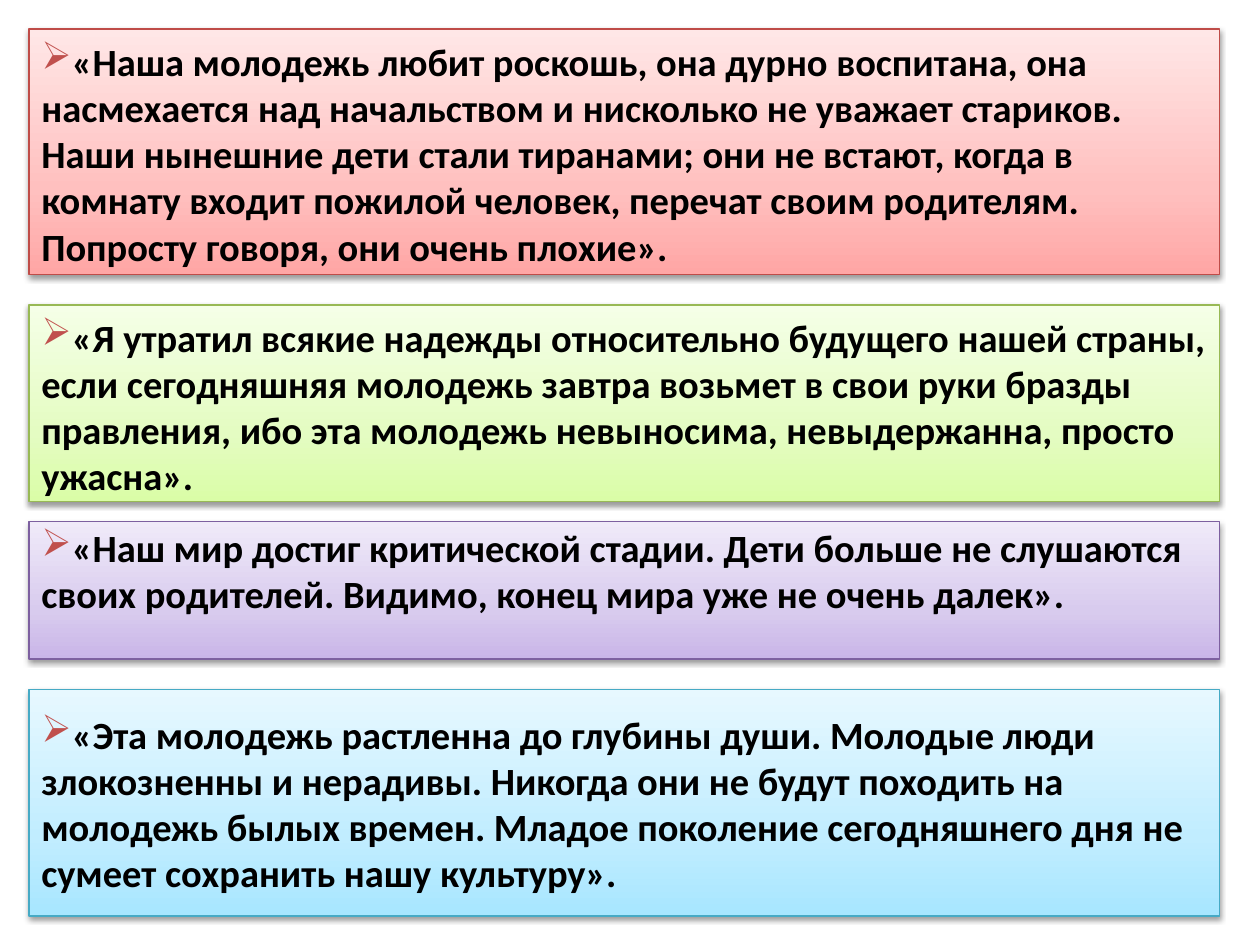
"""Build a slide with four quotations about young people in coloured panels."""
import copy

import pptx
import pptx.dml.color
import pptx.enum.shapes
import pptx.enum.text
import pptx.oxml
import pptx.oxml.ns
import pptx.util

Inches = pptx.util.Inches
NS = pptx.oxml.ns.nsdecls("a")
SHADOW = (
    f'<a:outerShdw {NS} blurRad="40000" dist="20000" dir="5400000" rotWithShape="0">'
    '<a:srgbClr val="000000"><a:alpha val="38000"/></a:srgbClr></a:outerShdw>'
)
BULLET = (
    f'<a:buClr {NS}><a:srgbClr val="C0504D"/></a:buClr>',
    f'<a:buChar {NS} char="➢"/>',
)
PANELS = [
    (0.23, 1.95, 0.07, "BF4C48", ("FFA6A5", "FFC0BF", "FFE7E7"),
     "«Наша молодежь любит роскошь, она дурно воспитана, она насмехается над "
     "начальством и нисколько не уважает стариков. Наши нынешние дети стали "
     "тиранами; они не встают, когда в комнату входит пожилой человек, перечат "
     "своим родителям. Попросту говоря, они очень плохие»."),
    (2.42, 1.56, 0.07, "98B955", ("DAFDA7", "E4FCC2", "F5FFE7"),
     "«Я утратил всякие надежды относительно будущего нашей страны, если "
     "сегодняшняя молодежь завтра возьмет в свои руки бразды правления, ибо эта "
     "молодежь невыносима, невыдержанна, просто ужасна»."),
    (4.14, 1.09, 0.02, "7D60A0", ("C9B5E8", "D8CBEE", "F0EAF9"),
     "«Наш мир достиг критической стадии. Дети больше не слушаются своих "
     "родителей. Видимо, конец мира уже не очень далек»."),
    (5.47, 1.8, 0.17, "46AAC5", ("A7E6FF", "C1EDFF", "E7F8FF"),
     "«Эта молодежь растленна до глубины души. Молодые люди злокозненны и "
     "нерадивы. Никогда они не будут походить на молодежь былых времен. Младое "
     "поколение сегодняшнего дня не сумеет сохранить нашу культуру»."),
]


def set_color(color_format, value):
    """Apply a hex colour."""
    color_format.rgb = pptx.dml.color.RGBColor.from_string(value)


prs = pptx.Presentation()
prs.slide_width = Inches(10)
prs.slide_height = Inches(7.5)
s = prs.slides.add_slide(prs.slide_layouts[6])

for top, height, inset, border, shades, quote in PANELS:
    sp = s.shapes.add_shape(
        pptx.enum.shapes.MSO_SHAPE.RECTANGLE,
        Inches(0.23), Inches(top), Inches(9.45), Inches(height),
    )
    sp.fill.gradient()
    sp.fill.gradient_angle = 90
    gs_list = sp.element.spPr.xpath("a:gradFill/a:gsLst")[0]
    gs_list.insert(1, copy.deepcopy(gs_list[0]))
    for stop, position, shade in zip(sp.fill.gradient_stops, (0, 0.35, 1), shades):
        stop.position = position
        set_color(stop.color, shade)
    sp.line.width = pptx.util.Pt(0.75)
    set_color(sp.line.color, border)
    sp.shadow.inherit = False
    sp.element.spPr.xpath("a:effectLst")[0].append(pptx.oxml.parse_xml(SHADOW))

    tf = sp.text_frame
    tf.word_wrap = True
    tf.vertical_anchor = pptx.enum.text.MSO_ANCHOR.TOP
    tf.margin_top = Inches(inset)
    tf.margin_bottom = 0
    p = tf.paragraphs[0]
    p.text = quote
    p.alignment = pptx.enum.text.PP_ALIGN.LEFT
    for tag in BULLET:
        p.runs[0].font.bold = True
        p._p.get_or_add_pPr().append(pptx.oxml.parse_xml(tag))
    r = p.runs[0]
    r.font.name = "Calibri"
    r.font.size = pptx.util.Pt(22)
    set_color(r.font.color, "000000")

prs.save("out.pptx")
